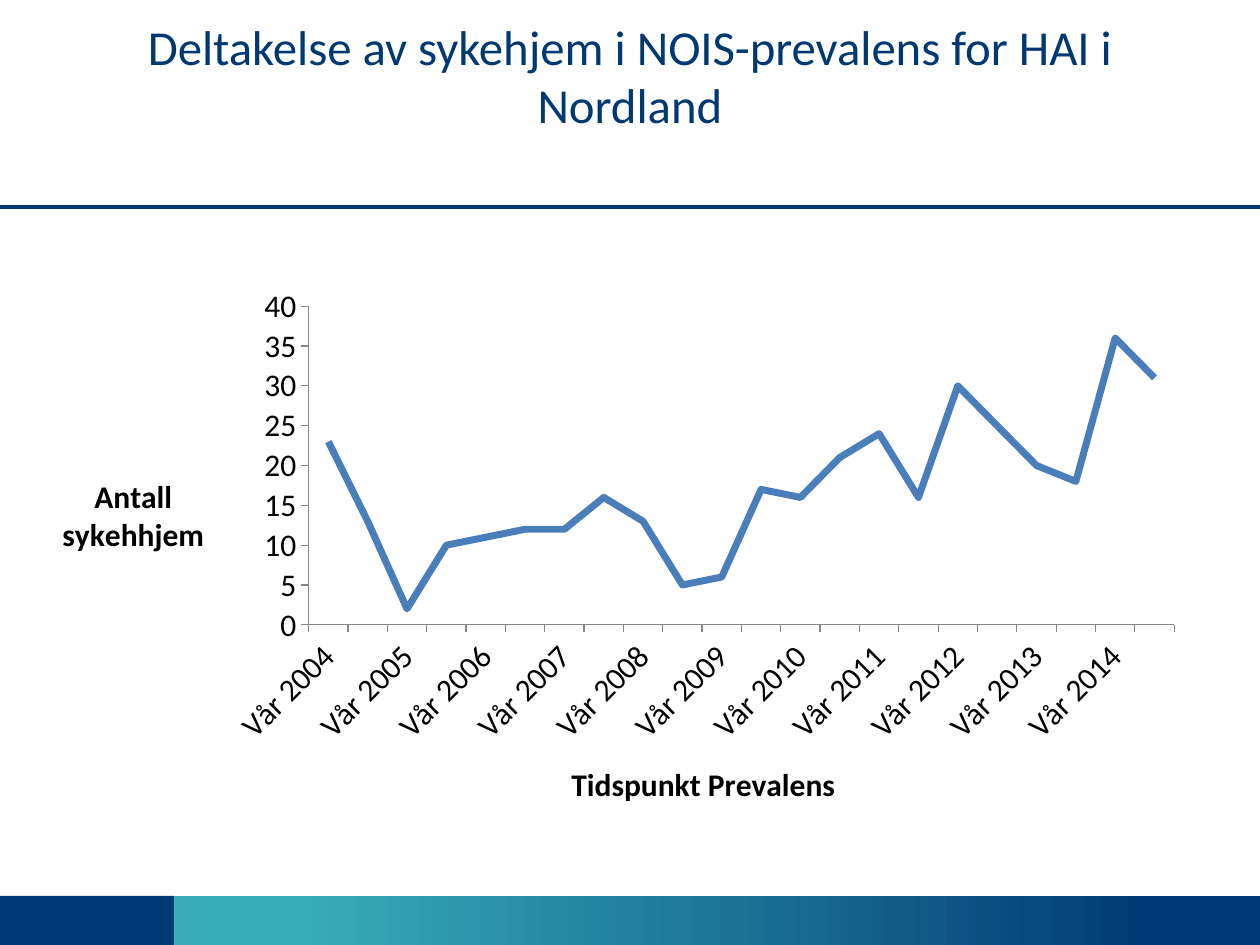
from dataclasses import dataclass

from lxml.etree import SubElement
from pptx import Presentation
from pptx.chart.data import CategoryChartData
from pptx.dml.color import RGBColor
from pptx.enum.chart import XL_CHART_TYPE as ChartType, XL_TICK_MARK as TickMark
from pptx.enum.shapes import MSO_CONNECTOR as Connector, MSO_SHAPE as Shape
from pptx.enum.text import MSO_ANCHOR as Anchor, PP_ALIGN as Align
from pptx.oxml import parse_xml
from pptx.oxml.ns import nsdecls, qn
from pptx.util import Inches, Pt

TITLE = "Deltakelse av sykehjem i NOIS-prevalens for HAI i Nordland"
CATEGORY_TITLE = "Tidspunkt Prevalens"
VALUE_TITLE = "Antall sykehhjem"
CATEGORIES = [f"{season} {year}" for year in range(2004, 2015) for season in ("Vår", "Høst")]
NURSING_HOMES = [23, 13, 2, 10, 11, 12, 12, 16, 13, 5, 6,
                 17, 16, 21, 24, 16, 30, 25, 20, 18, 36, 31]


@dataclass(frozen=True)
class Theme:
    font: str = "Calibri"
    navy: RGBColor = RGBColor(0x00, 0x38, 0x71)
    teal: RGBColor = RGBColor(0x39, 0xAE, 0xBB)
    series: RGBColor = RGBColor(0x4A, 0x7E, 0xBB)
    axis: RGBColor = RGBColor(0x86, 0x86, 0x86)
    text: RGBColor = RGBColor(0, 0, 0)
    title_size: float = 27.9
    chart_size: float = 18


THEME = Theme()
SLIDE_WIDTH, SLIDE_HEIGHT = 10, 7.5
FOOTER_HEIGHT, FOOTER_SPLIT = 0.39, 1.38
CHART_LEFT, CHART_TOP, CHART_WIDTH, CHART_HEIGHT = 0.28, 2.19, 9.22, 4.44


def format_font(font, size, color, bold=False):
    font.name = THEME.font
    font.size = Pt(size)
    font.bold = bold
    font.color.rgb = color


def add_text(slide, text, left, top, width, height, *, size, color, align):
    frame = slide.shapes.add_textbox(
        Inches(left), Inches(top), Inches(width), Inches(height)).text_frame
    frame.word_wrap = True
    frame.vertical_anchor = Anchor.MIDDLE
    paragraph = frame.paragraphs[0]
    paragraph.alignment = align
    run = paragraph.add_run()
    run.text = text
    format_font(run.font, size, color)


def add_footer_band(slide, left, right):
    band = slide.shapes.add_shape(
        Shape.RECTANGLE, Inches(left), Inches(SLIDE_HEIGHT - FOOTER_HEIGHT),
        Inches(right - left), Inches(FOOTER_HEIGHT))
    band.shadow.inherit = False
    band.line.fill.background()
    return band.fill


def add_footer(slide):
    gradient = add_footer_band(slide, FOOTER_SPLIT, SLIDE_WIDTH)
    gradient.gradient()
    gradient.gradient_angle = 0
    stops = ((0.1, THEME.teal), (0.92, THEME.navy))
    for stop, (position, color) in zip(gradient.gradient_stops, stops):
        stop.position = position
        stop.color.rgb = color
    solid = add_footer_band(slide, 0, FOOTER_SPLIT)
    solid.solid()
    solid.fore_color.rgb = THEME.navy


def add_rule(slide, top):
    rule = slide.shapes.add_connector(
        Connector.STRAIGHT, 0, Inches(top), Inches(SLIDE_WIDTH), Inches(top))
    rule.line.color.rgb = THEME.navy
    rule.line.width = Pt(2.25)
    SubElement(rule._element.spPr, qn("a:effectLst"))


def manual_layout(left, top, width=None, height=None):
    """Return a chart layout from slide inches; a size means the inner plot area."""
    parts = [("xMode", "edge"), ("yMode", "edge"),
             ("x", (left - CHART_LEFT) / CHART_WIDTH), ("y", (top - CHART_TOP) / CHART_HEIGHT)]
    if width is not None:
        parts = [("layoutTarget", "inner"), *parts,
                 ("w", width / CHART_WIDTH), ("h", height / CHART_HEIGHT)]
    body = "".join(f'<c:{name} val="{value}"/>' for name, value in parts)
    return parse_xml(f'<c:layout {nsdecls("c")}><c:manualLayout>{body}'
                     '</c:manualLayout></c:layout>')


def format_axis(axis, title, left, top):
    axis.has_major_gridlines = False
    axis.major_tick_mark = TickMark.OUTSIDE
    axis.minor_tick_mark = TickMark.NONE
    axis.format.line.color.rgb = THEME.axis
    format_font(axis.tick_labels.font, THEME.chart_size, THEME.text)
    frame = axis.axis_title.text_frame
    frame.text = title
    frame._txBody.bodyPr.set("rot", "0")
    frame._txBody.bodyPr.set("vert", "horz")
    format_font(frame.paragraphs[0].runs[0].font, THEME.chart_size, THEME.text, bold=True)
    title_element = axis.axis_title._element
    for layout in title_element.findall(qn("c:layout")):
        title_element.remove(layout)
    title_element.find(qn("c:tx")).addnext(manual_layout(left, top))


def add_participation_chart(slide):
    data = CategoryChartData()
    data.categories = CATEGORIES
    data.add_series("Series 1", NURSING_HOMES)
    chart = slide.shapes.add_chart(
        ChartType.LINE, Inches(CHART_LEFT), Inches(CHART_TOP),
        Inches(CHART_WIDTH), Inches(CHART_HEIGHT), data).chart
    chart.has_legend = False
    chart.has_title = False
    format_font(chart.font, THEME.chart_size, THEME.text)

    plot = chart.plots[0]
    plot.vary_by_categories = False
    series = plot.series[0]
    series.smooth = False
    series.format.line.color.rgb = THEME.series
    series.format.line.width = Pt(4)

    categories, values = chart.category_axis, chart.value_axis
    format_axis(categories, CATEGORY_TITLE, 4.49, 6.01)
    format_axis(values, VALUE_TITLE, 0.45, 3.72)
    values.minimum_scale, values.maximum_scale, values.major_unit = 0, 40, 5
    categories._element.find(qn("c:txPr")).find(qn("a:bodyPr")).set("rot", "-2700000")
    label_skip = parse_xml(f'<c:tickLblSkip {nsdecls("c")} val="2"/>')
    categories._element.find(qn("c:noMultiLvlLbl")).addprevious(label_skip)

    plot_area = plot._element.getparent()
    for layout in plot_area.findall(qn("c:layout")):
        plot_area.remove(layout)
    plot_area.insert(0, manual_layout(2.45, 2.43, 6.87, 2.53))


def main():
    presentation = Presentation()
    presentation.slide_width = Inches(SLIDE_WIDTH)
    presentation.slide_height = Inches(SLIDE_HEIGHT)
    slide = presentation.slides.add_slide(presentation.slide_layouts[6])
    add_footer(slide)
    add_rule(slide, 1.64)
    add_text(slide, TITLE, 0.5, 0.07, 9, 1.05,
             size=THEME.title_size, color=THEME.navy, align=Align.CENTER)
    add_participation_chart(slide)
    presentation.save("out.pptx")


if __name__ == "__main__":
    main()
